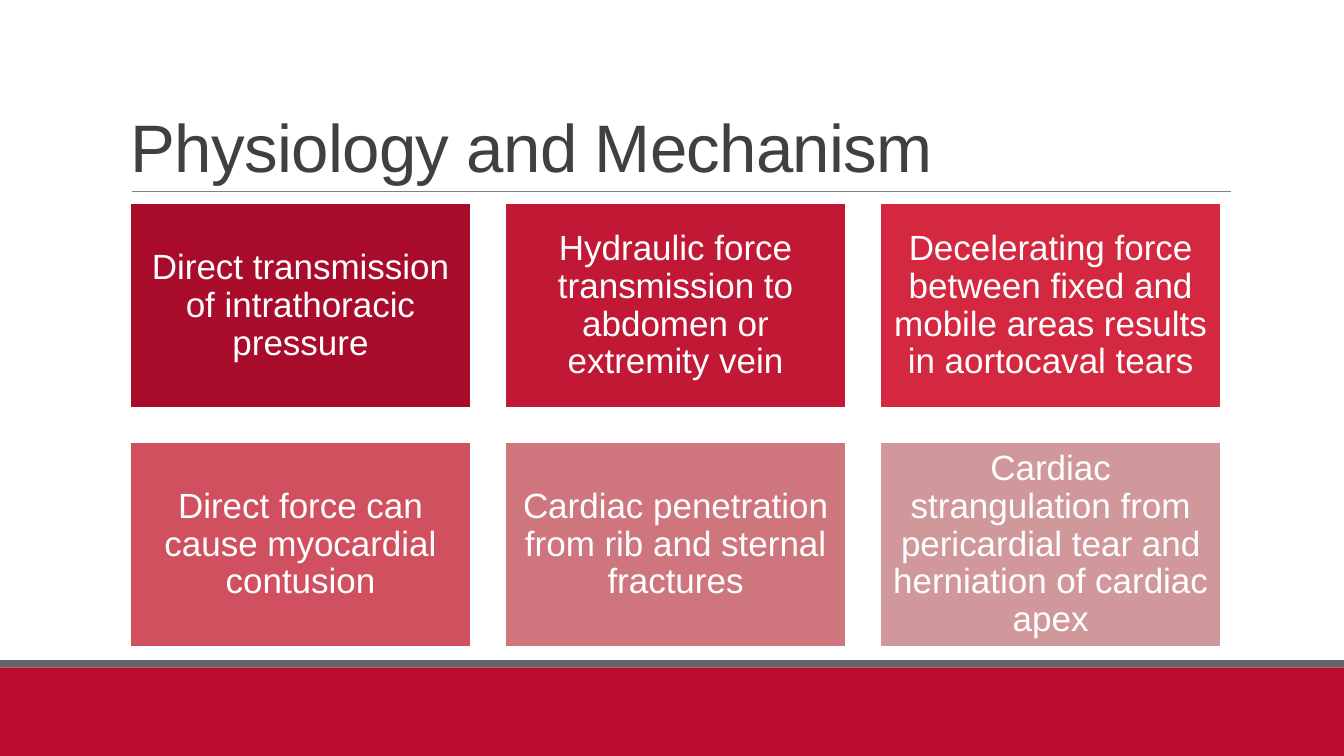
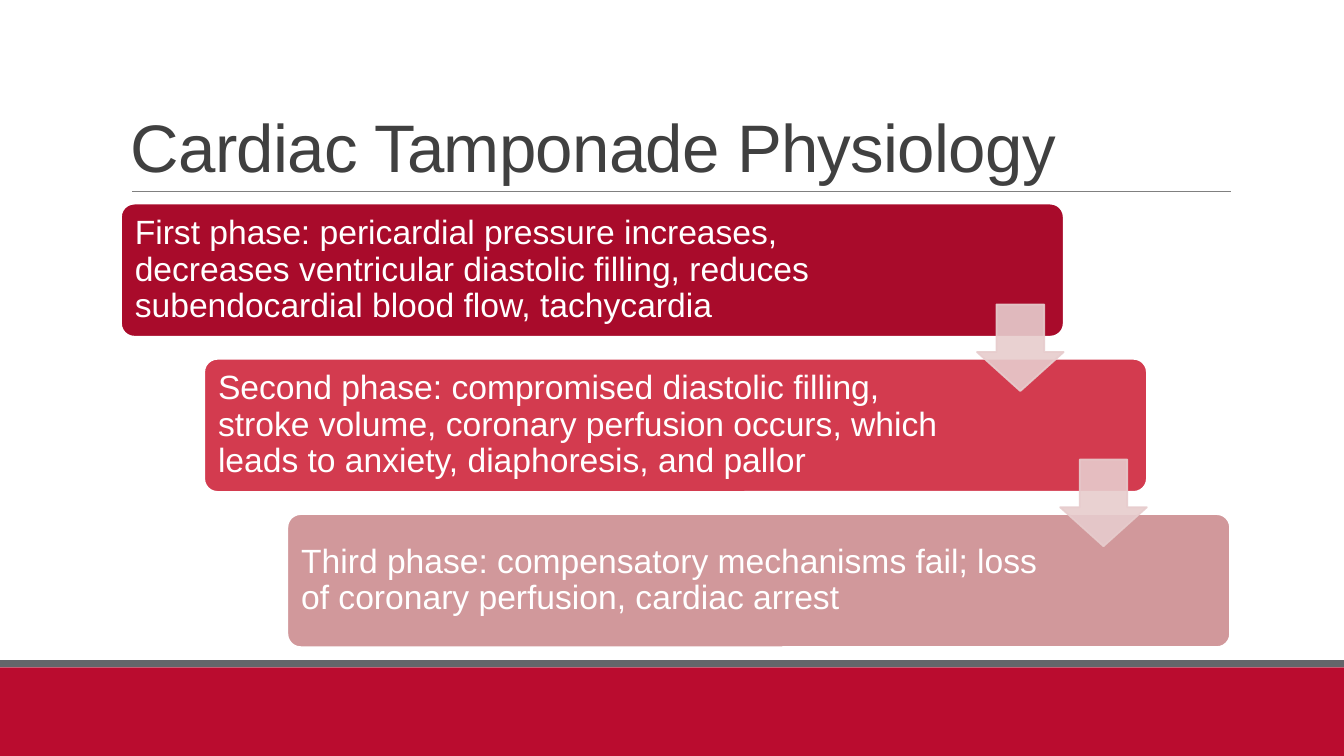
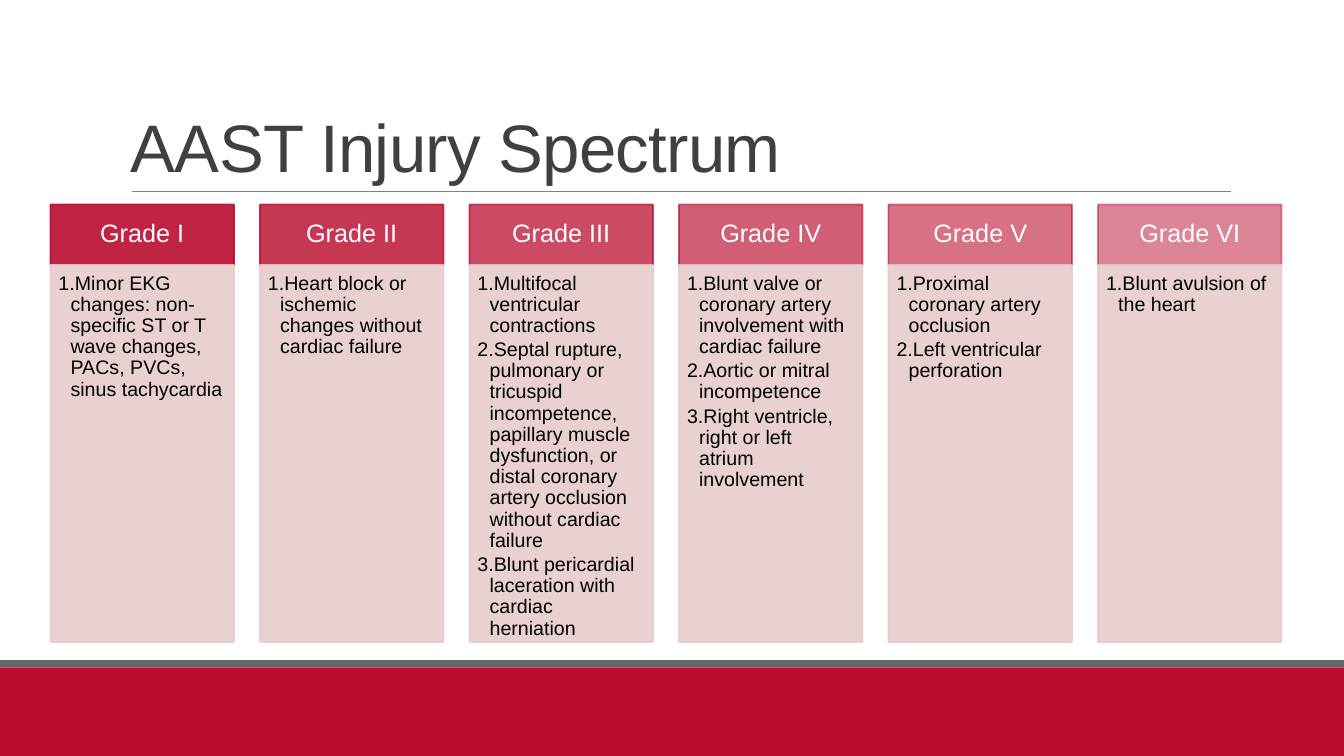
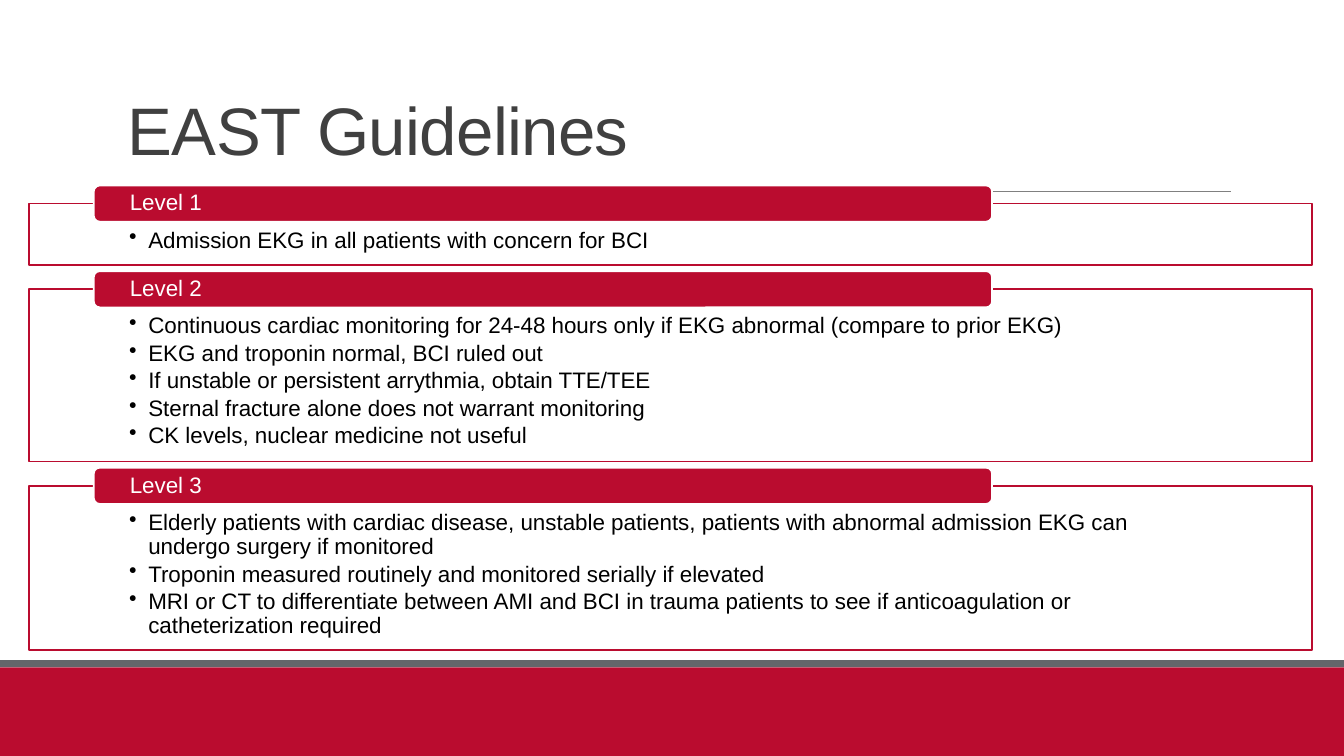
from dataclasses import dataclass
from typing import Any, Optional

from lxml import etree
from pptx import Presentation
from pptx import util as u
from pptx.dml.color import RGBColor
from pptx.enum import shapes, text
from pptx.oxml.ns import qn

WIDTH, HEIGHT = 13.33, 7.5
FONT = "Arial"
CRIMSON, BLUSH, SLATE, RULE = "BA0C2F", "E7CCCD", "63666A", "808080"
WHITE, BLACK, CHARCOAL = "FFFFFF", "000000", "404040"
KIND = shapes.MSO_SHAPE
ALIGN, ANCHOR = text.PP_ALIGN, text.MSO_ANCHOR


@dataclass(frozen=True)
class Box:
    left: float
    top: float
    width: float
    height: float

    def emu(self) -> list[int]:
        return [u.Inches(v) for v in (self.left, self.top, self.width, self.height)]


@dataclass(frozen=True)
class Grid:
    """An area cut into equal cells, whose size is fixed and whose gaps follow."""
    area: Box
    columns: int
    rows: int
    cell_width: float
    cell_height: float

    def cell(self, column: int, row: int) -> Box:
        across = (self.area.width - self.cell_width) / max(self.columns - 1, 1)
        down = (self.area.height - self.cell_height) / max(self.rows - 1, 1)
        return Box(self.area.left + column * across, self.area.top + row * down,
                   self.cell_width, self.cell_height)


@dataclass(frozen=True)
class TextStyle:
    size: float
    color: str = WHITE
    align: Any = ALIGN.LEFT
    anchor: Any = ANCHOR.MIDDLE
    insets: tuple[float, float, float, float] = (0.1, 0.1, 0.1, 0.1)
    line_spacing: float = 0.9
    after: float = 0.0  # share of the text size
    bullet: Optional[tuple[str, str, str]] = None  # tag, attribute, value
    indent: float = 0.0
    tracking: float = 0.0


@dataclass(frozen=True)
class Phase:
    color: str
    right_inset: float
    words: str


@dataclass(frozen=True)
class Section:
    heading: str
    items: list[str]
    height: float = 0.0


TITLE = TextStyle(48, CHARCOAL, anchor=ANCHOR.BOTTOM, insets=(0.1, 0.05, 0.1, 0.05),
                  line_spacing=0.85, tracking=-0.5)
TILE = TextStyle(25, align=ALIGN.CENTER)
GRADE = TextStyle(18, align=ALIGN.CENTER, insets=(0.14, 0.08, 0.14, 0.08))
FINDINGS = TextStyle(14, BLACK, anchor=ANCHOR.TOP, insets=(0.08, 0.08, 0.11, 0.12), after=0.15,
                     bullet=("a:buAutoNum", "type", "arabicPeriod"), indent=0.12)
LEVEL = TextStyle(16, insets=(0.34, 0, 0.34, 0))
ADVICE = TextStyle(16, BLACK, anchor=ANCHOR.TOP, insets=(0.99, 0.25, 0.99, 0.12), after=0.15,
                   bullet=("a:buChar", "char", "•"), indent=0.19)

MECHANISMS = [
    ("A90B2B", "Direct transmission of intrathoracic pressure"),
    ("C01835", "Hydraulic force transmission to abdomen or extremity vein"),
    ("D42841", "Decelerating force between fixed and mobile areas results in aortocaval tears"),
    ("D1505F", "Direct force can cause myocardial contusion"),
    ("CF757E", "Cardiac penetration from rib and sternal fractures"),
    ("D1989B", "Cardiac strangulation from pericardial tear and herniation of cardiac apex"),
]
PHASES = [
    Phase("A90B2B", 1.44, "First phase: pericardial pressure increases, decreases ventricular "
          "diastolic filling, reduces subendocardial blood flow, tachycardia"),
    Phase("D33B4F", 1.78, "Second phase: compromised diastolic filling, stroke volume, coronary "
          "perfusion occurs, which leads to anxiety, diaphoresis, and pallor"),
    Phase("D1989B", 1.78, "Third phase: compensatory mechanisms fail; loss of coronary perfusion, "
          "cardiac arrest"),
]
GRADES = [
    Section("Grade I", ["Minor EKG changes: non-specific ST or T wave changes, PACs, PVCs, "
                        "sinus tachycardia"]),
    Section("Grade II", ["Heart block or ischemic changes without cardiac failure"]),
    Section("Grade III", [
        "Multifocal ventricular contractions",
        "Septal rupture, pulmonary or tricuspid incompetence, papillary muscle dysfunction, "
        "or distal coronary artery occlusion without cardiac failure",
        "Blunt pericardial laceration with cardiac herniation"]),
    Section("Grade IV", [
        "Blunt valve or coronary artery involvement with cardiac failure",
        "Aortic or mitral incompetence",
        "Right ventricle, right or left atrium involvement"]),
    Section("Grade V", ["Proximal coronary artery occlusion", "Left ventricular perforation"]),
    Section("Grade VI", ["Blunt avulsion of the heart"]),
]
LEVELS = [
    Section("Level 1", ["Admission EKG in all patients with concern for BCI"], 0.61),
    Section("Level 2", [
        "Continuous cardiac monitoring for 24-48 hours only if EKG abnormal "
        "(compare to prior EKG)",
        "EKG and troponin normal, BCI ruled out",
        "If unstable or persistent arrythmia, obtain TTE/TEE",
        "Sternal fracture alone does not warrant monitoring",
        "CK levels, nuclear medicine not useful"], 1.71),
    Section("Level 3", [
        "Elderly patients with cardiac disease, unstable patients, patients with abnormal "
        "admission EKG can undergo surgery if monitored",
        "Troponin measured routinely and monitored serially if elevated",
        "MRI or CT to differentiate between AMI and BCI in trauma patients to see if "
        "anticoagulation or catheterization required"], 1.63),
]


def rgb(color: str) -> RGBColor:
    return RGBColor.from_string(color)


def assign(target: Any, values: dict[str, Any]) -> None:
    for name, value in values.items():
        setattr(target, name, value)


def write(shape: Any, paragraphs: list[str], style: TextStyle) -> None:
    frame = shape.text_frame
    left, top, right, bottom = (u.Inches(v) for v in style.insets)
    assign(frame, {"word_wrap": True, "vertical_anchor": style.anchor, "margin_left": left,
                   "margin_top": top, "margin_right": right, "margin_bottom": bottom})
    for index, words in enumerate(paragraphs):
        paragraph = frame.add_paragraph() if index else frame.paragraphs[0]
        if style.bullet:
            tag, attribute, value = style.bullet
            properties = paragraph._p.get_or_add_pPr()
            properties.set("marL", str(u.Inches(style.indent)))
            properties.set("indent", str(-u.Inches(style.indent)))
            etree.SubElement(properties, qn(tag)).set(attribute, value)
        assign(paragraph, {"alignment": style.align, "line_spacing": style.line_spacing,
                           "space_after": u.Pt(style.after * style.size)})
        run = paragraph.add_run()
        run.text = words
        assign(run.font, {"name": FONT, "size": u.Pt(style.size)})
        run.font.color.rgb = rgb(style.color)
        if style.tracking:
            run._r.get_or_add_rPr().set("spc", str(round(style.tracking * 100)))


def add_block(slide: Any, box: Box, fill: str, line: Optional[str] = None, kind: Any = KIND.RECTANGLE,
              adjustments: tuple[float, ...] = (), opacity: int = 100) -> Any:
    """Add a filled shape; opacity, in percent, covers fill and outline."""
    block = slide.shapes.add_shape(kind, *box.emu())
    block.shadow.inherit = False
    for index, value in enumerate(adjustments):
        block.adjustments[index] = value
    block.fill.solid()
    block.fill.fore_color.rgb = rgb(fill)
    if line:
        block.line.color.rgb = rgb(line)
        block.line.width = u.Pt(1.25)
    else:
        block.line.fill.background()
    if opacity < 100:
        for color in block.element.spPr.iter(qn("a:srgbClr")):
            etree.SubElement(color, qn("a:alpha")).set("val", str(opacity * 1000))
    return block


def add_titled_slide(deck: Any, title: str, left: float = 1.2, top: float = 0.31) -> Any:
    """Add a blank slide with the footer bands, the rule and the title."""
    slide = deck.slides.add_slide(deck.slide_layouts[6])
    add_block(slide, Box(0, 6.62, WIDTH, HEIGHT - 6.62), CRIMSON)
    add_block(slide, Box(0, 6.55, WIDTH, 0.07), SLATE)
    rule = slide.shapes.add_connector(shapes.MSO_CONNECTOR.STRAIGHT,
                                      *(u.Inches(v) for v in (1.31, 1.9, 12.21, 1.9)))
    rule.line.color.rgb = rgb(RULE)
    rule.line.width = u.Pt(0.5)
    etree.SubElement(rule._element.spPr, qn("a:effectLst"))
    write(slide.shapes.add_textbox(*Box(left, top, 11, 1.59).emu()), [title], TITLE)
    return slide


def build_mechanisms(deck: Any) -> None:
    slide = add_titled_slide(deck, "Physiology and Mechanism")
    grid = Grid(Box(1.29, 2.02, 10.82, 4.4), 3, 2, 3.38, 2.03)
    for index, (color, words) in enumerate(MECHANISMS):
        row, column = divmod(index, grid.columns)
        write(add_block(slide, grid.cell(column, row), color, WHITE), [words], TILE)


def build_phases(deck: Any) -> None:
    slide = add_titled_slide(deck, "Cardiac Tamponade Physiology")
    count = len(PHASES)
    stairs = Grid(Box(1.2, 2.02, 11, 4.4), count, count, 9.35, 1.32)
    steps = [stairs.cell(index, index) for index in range(count)]
    for phase, step in zip(PHASES, steps):
        block = add_block(slide, step, phase.color, WHITE, KIND.ROUNDED_RECTANGLE, (0.1,))
        write(block, [phase.words], TextStyle(24, insets=(0.1, 0.1, phase.right_inset, 0.1)))
    side = 0.86
    for step in steps[:-1]:
        arrow = Box(step.left + step.width - side, step.top + 1, side, side)
        add_block(slide, arrow, BLUSH, BLUSH, KIND.DOWN_ARROW, (0.55, 0.45), 90)


def build_grades(deck: Any) -> None:
    slide = add_titled_slide(deck, "AAST Injury Spectrum")
    heads = Grid(Box(0.5, 2.03, 12.21, 0.6), len(GRADES), 1, 1.82, 0.6)
    for index, grade in enumerate(GRADES):
        head = heads.cell(index, 0)
        body = Box(head.left, head.top + head.height, head.width, 3.74)
        write(add_block(slide, head, CRIMSON, CRIMSON, opacity=90 - 8 * index),
              [grade.heading], GRADE)
        write(add_block(slide, body, BLUSH, BLUSH, opacity=90), grade.items, FINDINGS)


def build_guidelines(deck: Any) -> None:
    slide = add_titled_slide(deck, "EAST Guidelines", 1.17, 0.14)
    top, gap = 2.02, 0.24
    for level in LEVELS:
        write(add_block(slide, Box(0.29, top, 12.72, level.height), WHITE, CRIMSON),
              level.items, ADVICE)
        write(add_block(slide, Box(0.93, top - 0.18, 8.91, 0.36), CRIMSON, WHITE,
                        KIND.ROUNDED_RECTANGLE), [level.heading], LEVEL)
        top += level.height + gap


def main() -> None:
    deck = Presentation()
    assign(deck, {"slide_width": u.Inches(WIDTH), "slide_height": u.Inches(HEIGHT)})
    for build in (build_mechanisms, build_phases, build_grades, build_guidelines):
        build(deck)
    deck.save("out.pptx")


if __name__ == "__main__":
    main()
